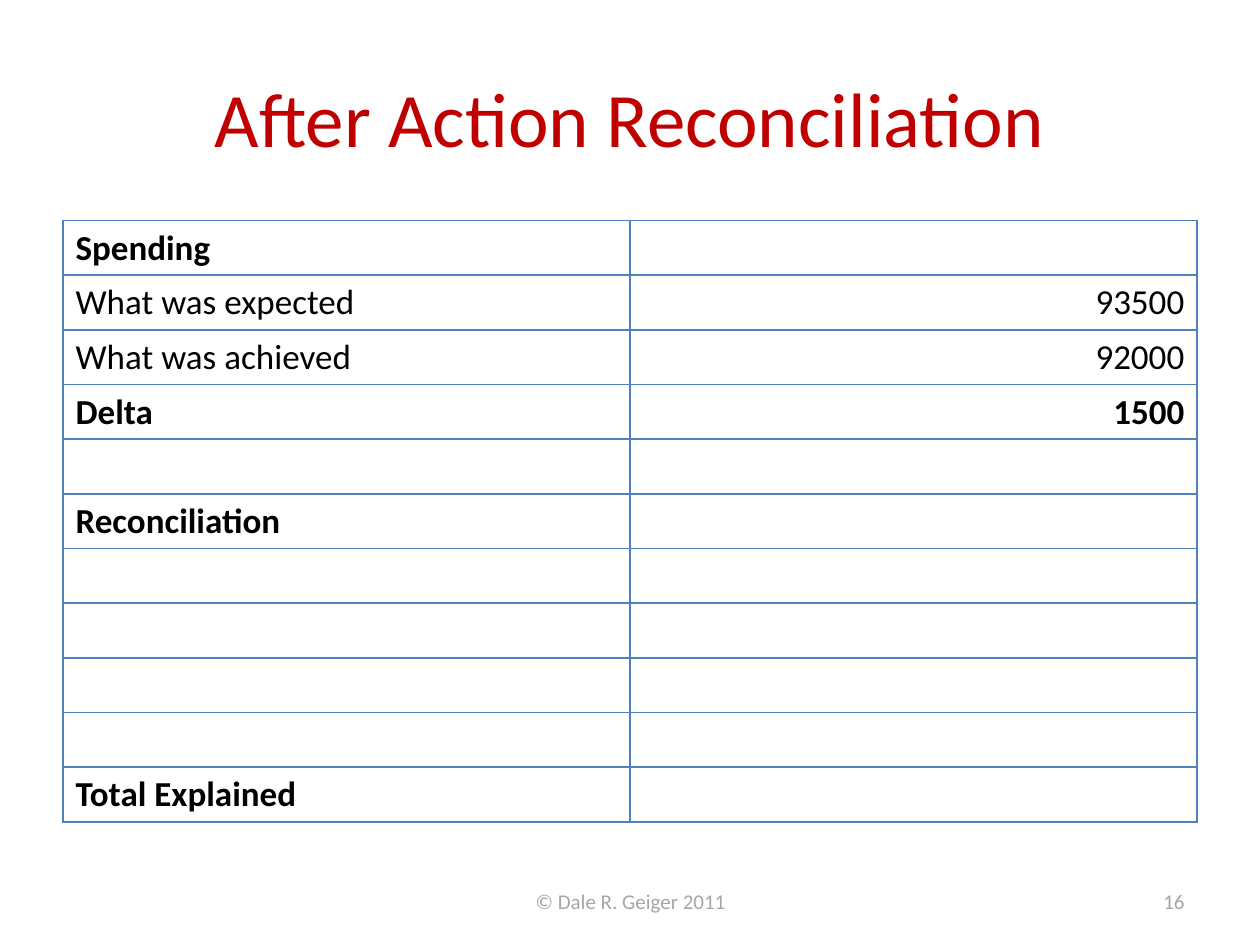
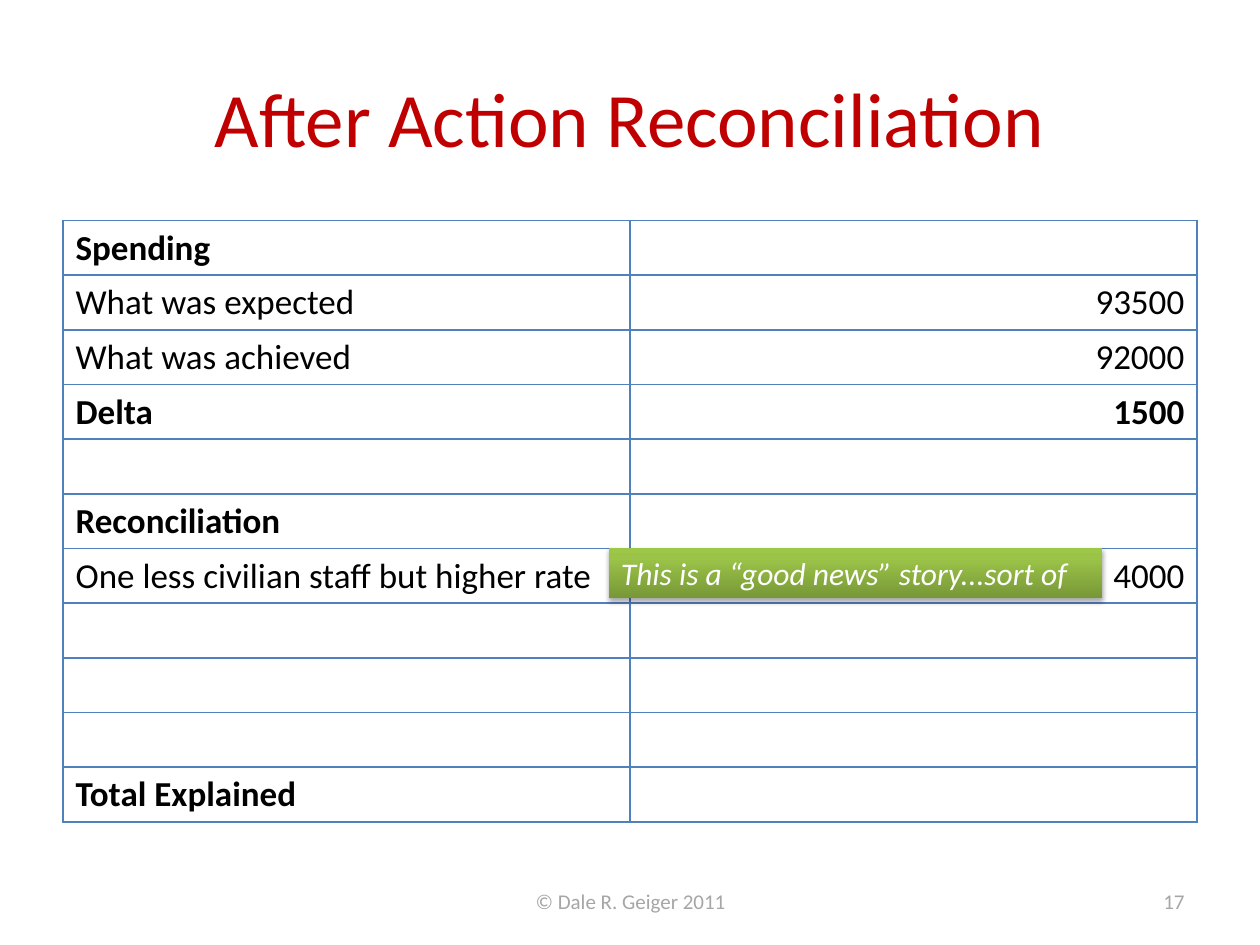
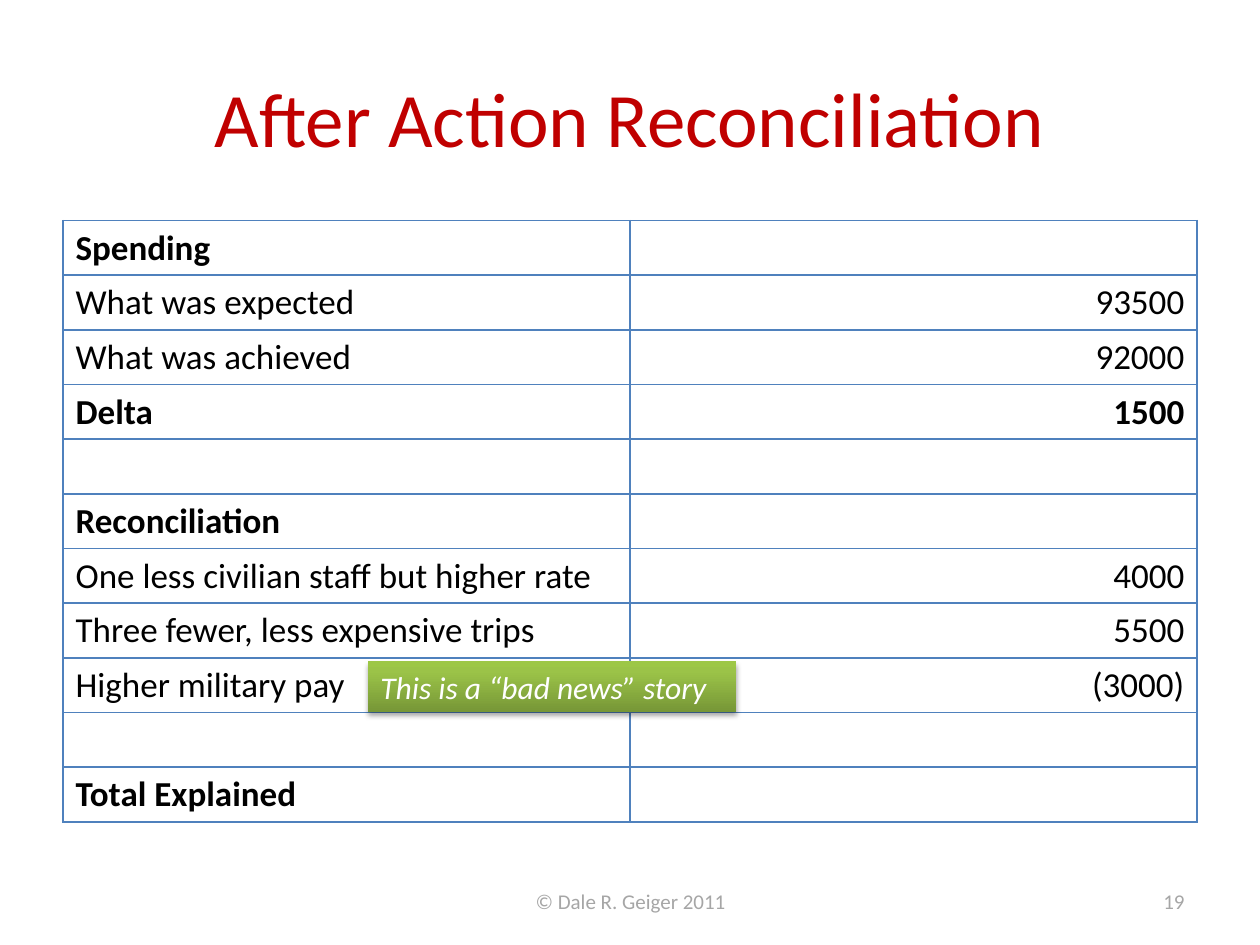
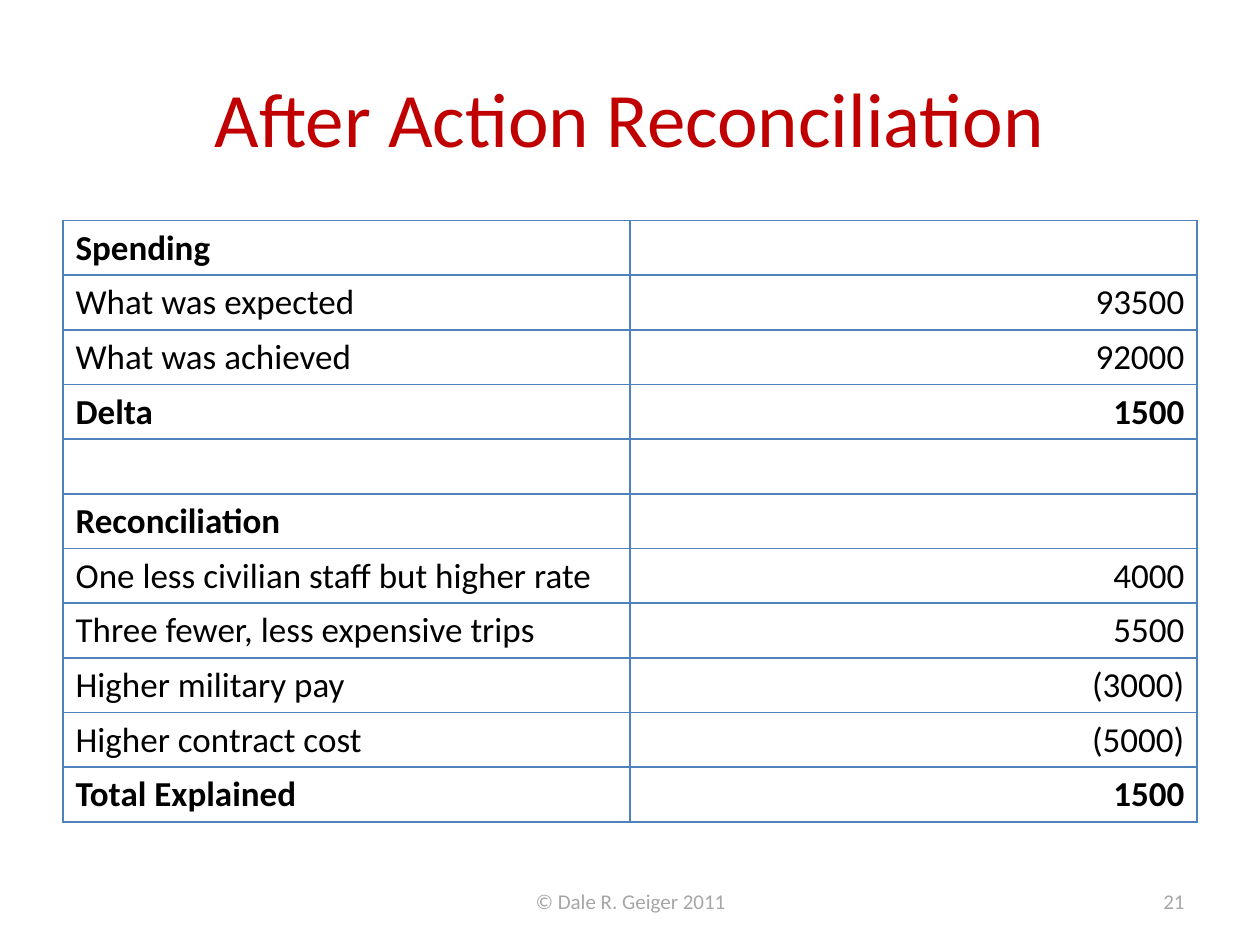
from dataclasses import dataclass

from lxml.etree import SubElement as Sub
from pptx import Presentation
from pptx.dml.color import RGBColor as RGB
from pptx.enum.shapes import MSO_SHAPE as Shape
from pptx.enum.text import MSO_ANCHOR as Anchor, MSO_AUTO_SIZE as Auto, PP_ALIGN as Align
from pptx.oxml.ns import qn
from pptx.util import Pt

PX = 9144  # EMU per px, 100 px to the inch


@dataclass(frozen=True)
class Theme:
    font: str = "Calibri"
    title: str = "C00000"
    ink: str = "000000"
    muted: str = "A6A6A6"
    grid: str = "4F81BD"
    light: str = "FFFFFF"
    glow: tuple = ((0, "779737"), (80, "9BC348"), (100, "9DC746"))
    head: int = 44
    body: int = 20
    note: int = 18
    foot: int = 12


TITLE = "After Action Reconciliation"
FOOT = "© Dale R. Geiger 2011"
SPEND = [
    ("Spending", ""),
    ("What was expected", "93500"),
    ("What was achieved", "92000"),
    ("Delta", "1500"),
    ("", ""),
    ("Reconciliation", ""),
]
CAUSES = [
    ("One less civilian staff but higher rate", "4000"),
    ("Three fewer, less expensive trips", "5500"),
    ("Higher military pay", "(3000)"),
    ("Higher contract cost", "(5000)"),
]
BOLD = {"Spending", "Delta", "Reconciliation", "Total Explained"}

# page number, causes shown, total, callout (text, left, top, width)
PAGES = [
    (16, 0, "", None),
    (17, 1, "", ("This is a “good news” story...sort of", 483, 435, 392)),
    (19, 3, "", ("This is a “bad news” story", 292, 525, 292)),
    (21, 4, "1500", None),
]


def add_color(parent, color):
    return Sub(parent, qn("a:srgbClr"), val=color)


class Deck:
    def __init__(self, theme):
        self.theme = theme
        self.prs = Presentation()
        self.prs.slide_width, self.prs.slide_height = 1000 * PX, 750 * PX
        self.slide = None

    def page(self):
        self.slide = self.prs.slides.add_slide(self.prs.slide_layouts[6])

    def put_text(self, frame, text, size, color, align=Align.LEFT, **look):
        para = frame.paragraphs[0]
        para.alignment = align
        if not text:
            # keeps an empty row as tall as a filled one
            Sub(para._p, qn("a:endParaRPr"), sz=str(size * 100))
            return
        run = para.add_run()
        run.text = text
        run.font.color.rgb = RGB.from_string(color)
        look |= {"size": Pt(size), "name": self.theme.font}
        for key, val in look.items():
            setattr(run.font, key, val)

    def label(self, text, box, size, color, align):
        frame = self.slide.shapes.add_textbox(*(n * PX for n in box)).text_frame
        frame.word_wrap = True
        frame.vertical_anchor = Anchor.MIDDLE
        self.put_text(frame, text, size, color, align)

    def border(self, cell):
        props = cell._tc.get_or_add_tcPr()
        for side in "LRTB":
            line = Sub(props, qn(f"a:ln{side}"), w=str(Pt(1)))
            add_color(Sub(line, qn("a:solidFill")), self.theme.grid)

    def table(self, rows, box, tall):
        frame = self.slide.shapes.add_table(len(rows), 2, *(n * PX for n in box))
        grid = frame.table
        grid.first_row = grid.horz_banding = False
        for row, texts in zip(grid.rows, rows):
            row.height = tall * PX
            for cell, text, align in zip(row.cells, texts, (Align.LEFT, Align.RIGHT)):
                self.border(cell)
                cell.fill.background()
                self.put_text(cell.text_frame, text, self.theme.body, self.theme.ink,
                              align, bold=texts[0] in BOLD)
        frame.height = box[3] * PX

    def callout(self, text, left, top, width):
        box = (left, top, width, 40)
        shape = self.slide.shapes.add_shape(Shape.RECTANGLE, *(n * PX for n in box))
        shape.line.fill.background()
        shape.fill.gradient()
        shape.fill.gradient_angle = 90
        props = shape._element.spPr
        stops = props.find(".//" + qn("a:gsLst"))
        stops.clear()
        for pos, color in self.theme.glow:
            add_color(Sub(stops, qn("a:gs"), pos=str(pos * 1000)), color)
        shape.shadow.inherit = False
        shade = Sub(props.find(qn("a:effectLst")), qn("a:outerShdw"), blurRad=str(Pt(3.1)),
                    dist=str(Pt(1.8)), dir="5400000", rotWithShape="0")
        Sub(add_color(shade, self.theme.ink), qn("a:alpha"), val="35000")
        frame = shape.text_frame
        form = {"word_wrap": True, "vertical_anchor": Anchor.TOP,
                "auto_size": Auto.SHAPE_TO_FIT_TEXT}
        for key, val in form.items():
            setattr(frame, key, val)
        self.put_text(frame, text, self.theme.note, self.theme.light, italic=True)

    def title(self, text):
        self.label(text, (50, 30, 900, 125), self.theme.head, self.theme.title, Align.CENTER)

    def footer(self, num):
        look = self.theme.foot, self.theme.muted
        self.label(FOOT, (342, 695, 317, 40), *look, Align.CENTER)
        self.label(str(num), (717, 695, 233, 40), *look, Align.RIGHT)


def main():
    deck = Deck(Theme())
    for num, shown, total, note in PAGES:
        deck.page()
        deck.title(TITLE)
        blank = [("", "")] * (len(CAUSES) - shown)
        rows = SPEND + CAUSES[:shown] + blank + [("Total Explained", total)]
        deck.table(rows, (50, 175, 900, 477), 41)
        if note:
            deck.callout(*note)
        deck.footer(num)
    deck.prs.save("out.pptx")


if __name__ == "__main__":
    main()
